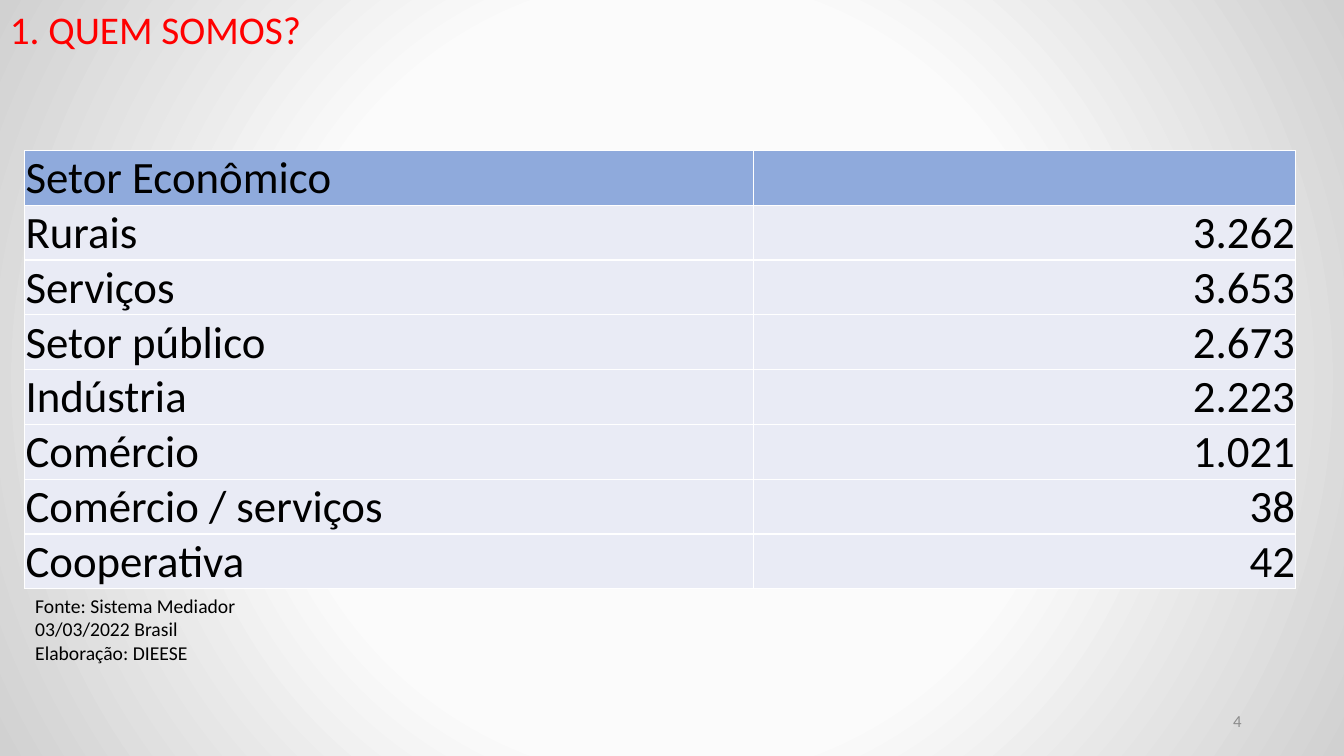
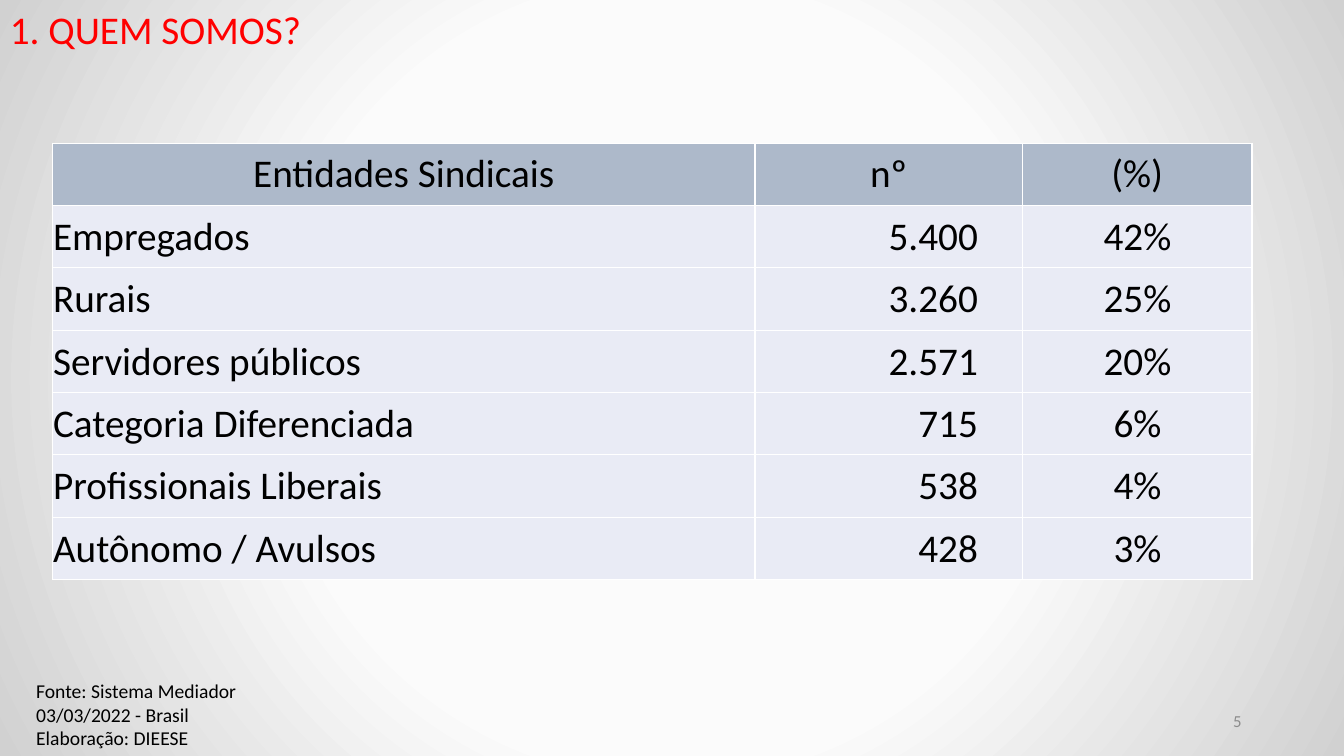
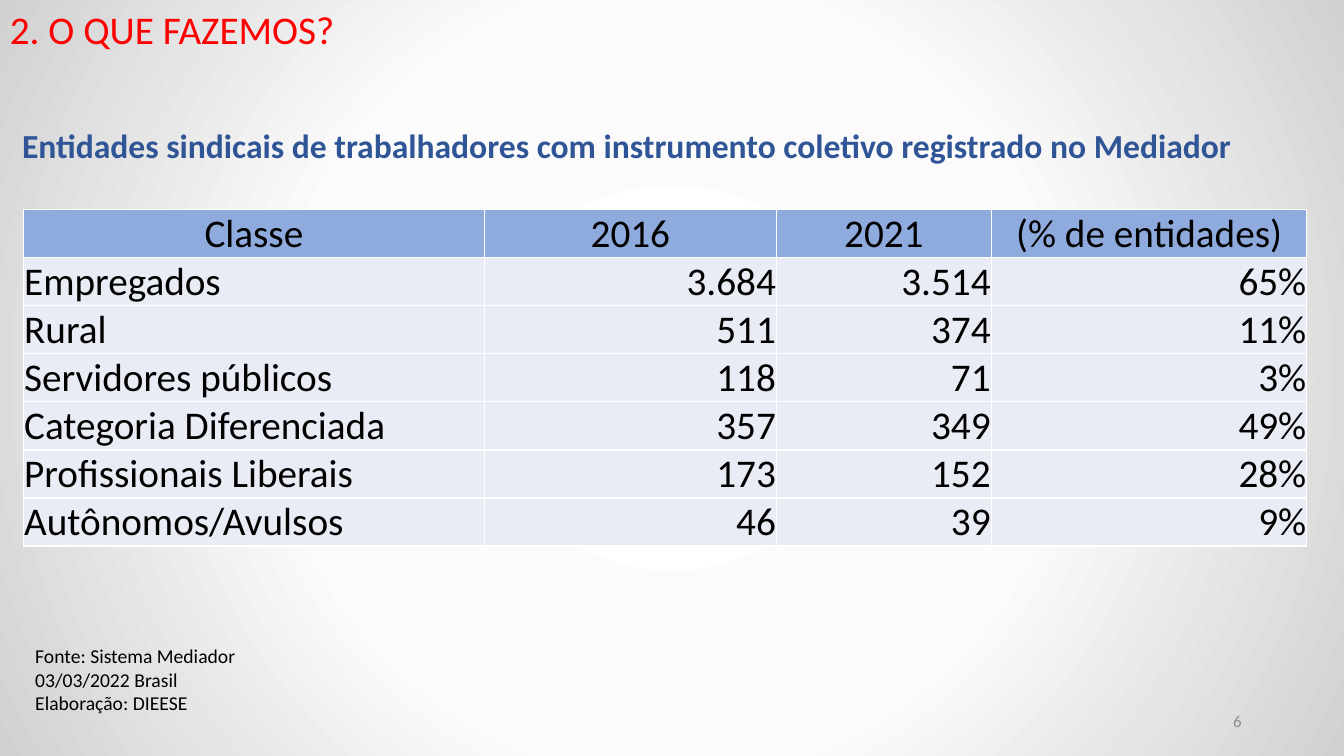
import lxml.etree
import pptx
import pptx.dml.color
import pptx.enum.text
import pptx.oxml
import pptx.oxml.ns
import pptx.util

RGB = pptx.dml.color.RGBColor
ALIGN = pptx.enum.text.PP_ALIGN
ANCHOR = pptx.enum.text.MSO_ANCHOR
PT = pptx.util.Pt

WIDTH = pptx.util.Inches(13.33)
HEIGHT = pptx.util.Inches(7.5)
FONT = "Calibri"

BLACK = RGB(0x00, 0x00, 0x00)
WHITE = RGB(0xFF, 0xFF, 0xFF)
RED = RGB(0xFF, 0x00, 0x00)
GRAY = RGB(0x8C, 0x8C, 0x8C)
NAVY = RGB(0x2F, 0x55, 0x97)
BLUE = RGB(0x8F, 0xAA, 0xDC)
SLATE = RGB(0xAD, 0xB9, 0xCA)
PALE = RGB(0xE9, 0xEB, 0xF5)
BACKDROP = ((0, WHITE), (50, RGB(0xFB, 0xFB, 0xFB)), (100, RGB(0xD1, 0xD1, 0xD1)))

SECTORS = (
    ("Setor Econômico", ""),
    ("Rurais", "3.262"),
    ("Serviços", "3.653"),
    ("Setor público", "2.673"),
    ("Indústria", "2.223"),
    ("Comércio", "1.021"),
    ("Comércio / serviços", "38"),
    ("Cooperativa", "42"),
)
UNIONS = (
    ("Entidades Sindicais", "nº", "(%)"),
    ("Empregados", "5.400", "42%"),
    ("Rurais", "3.260", "25%"),
    ("Servidores públicos", "2.571", "20%"),
    ("Categoria Diferenciada", "715", "6%"),
    ("Profissionais Liberais", "538", "4%"),
    ("Autônomo / Avulsos", "428", "3%"),
)
AGREEMENTS = (
    ("Classe", "2016", "2021", "(% de entidades)"),
    ("Empregados", "3.684", "3.514", "65%"),
    ("Rural", "511", "374", "11%"),
    ("Servidores públicos", "118", "71", "3%"),
    ("Categoria Diferenciada", "357", "349", "49%"),
    ("Profissionais Liberais", "173", "152", "28%"),
    ("Autônomos/Avulsos", "46", "39", "9%"),
)


def across(percent):
    return round(WIDTH * percent / 100)


def down(percent):
    return round(HEIGHT * percent / 100)


def style_text(tf, size, color, align=ALIGN.LEFT, bold=False):
    for p in tf.paragraphs:
        p.alignment = align
        for r in p.runs:
            r.font.name = FONT
            r.font.size = PT(size)
            r.font.bold = bold
            r.font.color.rgb = color


def add_text(s, text, box, size, color, align=ALIGN.LEFT, bold=False,
             anchor=ANCHOR.TOP, wrap=True):
    left, top, width, height = box
    sp = s.shapes.add_textbox(across(left), down(top), across(width), down(height))
    tf = sp.text_frame
    tf.word_wrap = wrap
    tf.vertical_anchor = anchor
    tf.text = text
    style_text(tf, size, color, align, bold)
    return tf


def set_backdrop(master):
    master.background.fill.gradient()
    grad = master.element.xpath(".//p:bgPr/a:gradFill")[0]
    stops = "".join(
        f'<a:gs pos="{pos * 1000}"><a:srgbClr val="{color}"/></a:gs>'
        for pos, color in BACKDROP)
    radial = pptx.oxml.parse_xml(
        f'<a:gradFill {pptx.oxml.ns.nsdecls("a")} rotWithShape="1">'
        f'<a:gsLst>{stops}</a:gsLst><a:path path="circle">'
        '<a:fillToRect l="50000" t="50000" r="50000" b="50000"/>'
        '</a:path></a:gradFill>')
    grad.getparent().replace(grad, radial)


def set_borders(cell):
    tcPr = cell._tc.get_or_add_tcPr()
    for side in ("lnL", "lnR", "lnT", "lnB"):
        ln = lxml.etree.SubElement(tcPr, pptx.oxml.ns.qn(f"a:{side}"), w=str(PT(1)))
        fill = lxml.etree.SubElement(ln, pptx.oxml.ns.qn("a:solidFill"))
        lxml.etree.SubElement(fill, pptx.oxml.ns.qn("a:srgbClr"), val=str(WHITE))


def add_data_table(s, rows, left, top, height, widths, size, header_fill,
                   header_align, aligns, anchor=ANCHOR.BOTTOM, indents=None):
    frame = s.shapes.add_table(len(rows), len(widths), across(left), down(top),
                               across(sum(widths)), down(height))
    table = frame.table
    table.first_row = False
    table.horz_banding = False
    for column, width in zip(table.columns, widths):
        column.width = across(width)
    for i, values in enumerate(rows):
        table.rows[i].height = down(height / len(rows))
        for j, value in enumerate(values):
            cell = table.cell(i, j)
            set_borders(cell)
            cell.fill.solid()
            cell.fill.fore_color.rgb = PALE if i else header_fill
            cell.vertical_anchor = anchor
            cell.margin_left = cell.margin_right = cell.margin_top = PT(0.5)
            cell.margin_bottom = 0
            if i and indents:
                cell.margin_right = across(indents[j])
            cell.text_frame.text = value
            style_text(cell.text_frame, size, BLACK, aligns[j] if i else header_align)


def add_page(prs, title, title_width, number, date, source_left, source_top):
    s = prs.slides.add_slide(prs.slide_layouts[6])
    add_text(s, title, (0, 0, title_width, 7.6), 28, RED, wrap=False)
    add_text(s, f"Fonte: Sistema Mediador\n{date}\nElaboração: DIEESE",
             (source_left, source_top, 21.08, 10.8), 14, BLACK)
    add_text(s, str(number), (70.63, 92.67, 22.5, 5.33), 12, GRAY,
             ALIGN.RIGHT, anchor=ANCHOR.MIDDLE)
    return s


def main():
    prs = pptx.Presentation()
    prs.slide_width = WIDTH
    prs.slide_height = HEIGHT
    set_backdrop(prs.slide_master)

    s = add_page(prs, "1. QUEM SOMOS?", 23.4, 4, "03/03/2022 Brasil", 1.88, 77.87)
    add_data_table(s, SECTORS, 1.85, 19.9, 58, (54.22, 40.35), 32, BLUE,
                   ALIGN.LEFT, (ALIGN.LEFT, ALIGN.RIGHT))

    s = add_page(prs, "1. QUEM SOMOS?", 23.4, 5, "03/03/2022 - Brasil", 1.95, 89.2)
    add_data_table(s, UNIONS, 3.9, 18.93, 57.73, (52.28, 19.88, 17.1), 28, SLATE,
                   ALIGN.CENTER, (ALIGN.LEFT, ALIGN.RIGHT, ALIGN.CENTER),
                   ANCHOR.MIDDLE, (0, 3.3, 0))

    s = add_page(prs, "2. O QUE FAZEMOS?", 26, 6, "03/03/2022 Brasil", 1.88, 84.53)
    tf = add_text(s, "Entidades sindicais de trabalhadores com instrumento coletivo "
                  "registrado no Mediador", (0.9, 13.87, 93.6, 11.33), 24, NAVY,
                  bold=True, anchor=ANCHOR.MIDDLE)
    tf.paragraphs[0].line_spacing = 0.9
    add_data_table(s, AGREEMENTS, 1.75, 27.73, 44.53, (34.28, 21.75, 15.98, 23.48),
                   28, BLUE, ALIGN.CENTER, (ALIGN.LEFT,) + (ALIGN.RIGHT,) * 3)

    prs.save("out.pptx")


if __name__ == "__main__":
    main()
